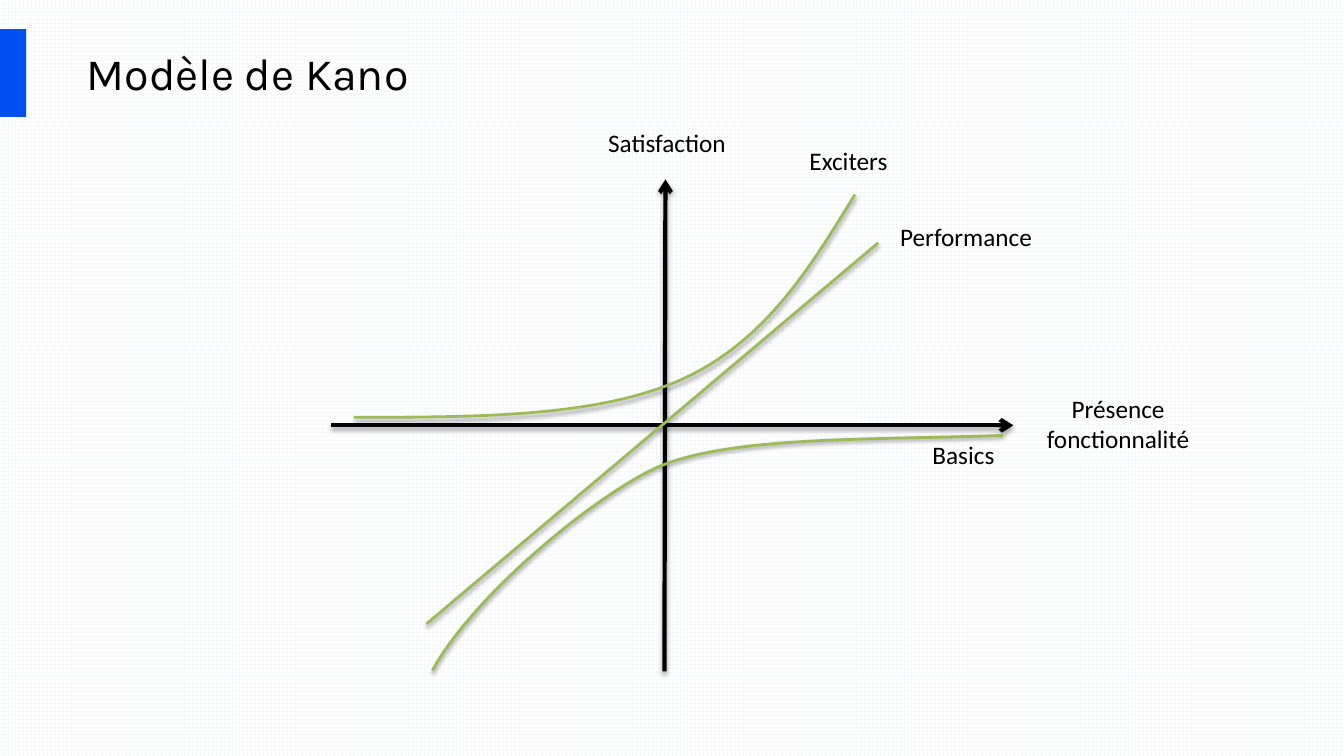
"""Build the Kano model slide: two axes, three satisfaction curves and their labels."""

from dataclasses import dataclass

import pptx
import pptx.dml.color
import pptx.enum.dml
import pptx.enum.shapes
import pptx.enum.text
import pptx.oxml
import pptx.oxml.ns
import pptx.shapes.base
import pptx.slide
import pptx.util

Inches = pptx.util.Inches
Pt = pptx.util.Pt
RGBColor = pptx.dml.color.RGBColor
PP_ALIGN = pptx.enum.text.PP_ALIGN
Point = tuple[float, float]

BLACK = RGBColor(0x00, 0x00, 0x00)
WHITE = RGBColor(0xFF, 0xFF, 0xFF)
BLUE = RGBColor(0x00, 0x50, 0xEF)
GREEN = RGBColor(0x9B, 0xBB, 0x59)
GRID = RGBColor(0xF6, 0xF8, 0xFC)
CURVE_STEPS = 24


@dataclass(frozen=True)
class Stroke:
    color: RGBColor
    width: float
    shadow_alpha: int
    shadow_distance: float
    arrow: bool = False


@dataclass(frozen=True)
class Line:
    start: Point
    end: Point
    stroke: Stroke


@dataclass(frozen=True)
class Curve:
    start: Point
    segments: tuple[tuple[Point, Point, Point], ...]


@dataclass(frozen=True)
class Label:
    text: str
    left: float
    top: float
    width: float
    height: float = 0.4
    align: PP_ALIGN = PP_ALIGN.LEFT


AXIS = Stroke(BLACK, 3, 35, 1.8, arrow=True)
TREND = Stroke(GREEN, 2, 38, 1.6)

LINES = (
    Line((6.6, 1.78), (6.59, 6.66), AXIS),
    Line((10.05, 4.22), (3.28, 4.22), AXIS),
    Line((4.23, 6.19), (8.71, 2.41), TREND),
)
CURVES = (
    Curve((3.51, 4.14), (
        ((4.72, 4.14), (5.92, 4.14), (6.75, 3.77)),
        ((7.58, 3.4), (8.03, 2.67), (8.48, 1.93)),
    )),
    Curve((4.29, 6.65), (
        ((4.66, 5.97), (5.73, 5.05), (6.41, 4.69)),
        ((7.09, 4.32), (8.53, 4.37), (9.95, 4.32)),
    )),
)
LABELS = (
    Label("Exciters", 7.93, 1.39, 1.18),
    Label("Performance", 8.83, 2.15, 1.85),
    Label("Basics", 9.15, 4.31, 1.18),
    Label("Satisfaction", 5.88, 1.21, 1.47, align=PP_ALIGN.CENTER),
    Label("Présence fonctionnalité", 10.16, 3.85, 1.86, 0.71, PP_ALIGN.CENTER),
)


def apply_stroke(sp: pptx.shapes.base.BaseShape, stroke: Stroke) -> None:
    sp.line.color.rgb = stroke.color
    sp.line.width = Pt(stroke.width)
    ns = pptx.oxml.ns.nsdecls("a")
    sp_pr = sp._element.spPr
    if stroke.arrow:
        ln = sp_pr.find(pptx.oxml.ns.qn("a:ln"))
        ln.append(pptx.oxml.parse_xml(f'<a:headEnd {ns} type="arrow"/>'))
    sp_pr.append(pptx.oxml.parse_xml(
        f'<a:effectLst {ns}><a:outerShdw blurRad="{Pt(3.1)}" '
        f'dist="{Pt(stroke.shadow_distance)}" dir="5400000" rotWithShape="0">'
        f'<a:srgbClr val="{BLACK}"><a:alpha val="{stroke.shadow_alpha * 1000}"/>'
        '</a:srgbClr></a:outerShdw></a:effectLst>'
    ))


def bezier(p0: Point, p1: Point, p2: Point, p3: Point, t: float) -> Point:
    u = 1 - t
    x, y = (
        u**3 * a + 3 * u**2 * t * b + 3 * u * t**2 * c + t**3 * d
        for a, b, c, d in zip(p0, p1, p2, p3)
    )
    return Inches(x), Inches(y)


def add_line(s: pptx.slide.Slide, line: Line) -> None:
    ends = (Inches(v) for v in (*line.start, *line.end))
    sp = s.shapes.add_connector(pptx.enum.shapes.MSO_CONNECTOR.STRAIGHT, *ends)
    apply_stroke(sp, line.stroke)


def add_curve(s: pptx.slide.Slide, curve: Curve) -> None:
    points = []
    start = curve.start
    for c1, c2, end in curve.segments:
        points += [
            bezier(start, c1, c2, end, i / CURVE_STEPS)
            for i in range(1, CURVE_STEPS + 1)
        ]
        start = end
    builder = s.shapes.build_freeform(*(Inches(v) for v in curve.start))
    builder.add_line_segments(points, close=False)
    sp = builder.convert_to_shape()
    sp.fill.background()
    apply_stroke(sp, TREND)


def add_label(s: pptx.slide.Slide, label: Label) -> None:
    box = (Inches(v) for v in (label.left, label.top, label.width, label.height))
    tf = s.shapes.add_textbox(*box).text_frame
    tf.word_wrap = True
    tf.auto_size = pptx.enum.text.MSO_AUTO_SIZE.SHAPE_TO_FIT_TEXT
    tf.text = label.text
    p = tf.paragraphs[0]
    p.alignment = label.align
    format_run(p.runs[0], "Calibri", 18)


def format_run(r: pptx.text.text._Run, font: str, size: int) -> None:
    r.font.name = font
    r.font.size = Pt(size)
    r.font.color.rgb = BLACK


def set_background(s: pptx.slide.Slide) -> None:
    fill = s.background.fill
    fill.patterned()
    fill.pattern = pptx.enum.dml.MSO_PATTERN.LARGE_GRID
    fill.fore_color.rgb = GRID
    fill.back_color.rgb = WHITE


def add_heading(s: pptx.slide.Slide) -> None:
    sp = s.shapes.add_shape(
        pptx.enum.shapes.MSO_SHAPE.RECTANGLE,
        Inches(0), Inches(0.29), Inches(0.26), Inches(0.87),
    )
    sp.fill.solid()
    sp.fill.fore_color.rgb = BLUE
    sp.line.fill.background()
    sp.shadow.inherit = False

    title = s.shapes.title
    title.left, title.top = Inches(0.76), Inches(0.29)
    title.width, title.height = Inches(11.92), Inches(0.85)
    tf = title.text_frame
    tf.text = "Modèle de Kano"
    tf.auto_size = pptx.enum.text.MSO_AUTO_SIZE.NONE
    tf.vertical_anchor = pptx.enum.text.MSO_ANCHOR.MIDDLE
    p = tf.paragraphs[0]
    p.alignment = PP_ALIGN.LEFT
    format_run(p.runs[0], "Karla", 32)


def main() -> None:
    prs = pptx.Presentation()
    prs.slide_width, prs.slide_height = Inches(13.33), Inches(7.5)
    s = prs.slides.add_slide(prs.slide_layouts[5])
    set_background(s)
    add_heading(s)
    for line in LINES:
        add_line(s, line)
    for curve in CURVES:
        add_curve(s, curve)
    for label in LABELS:
        add_label(s, label)
    prs.save("out.pptx")


if __name__ == "__main__":
    main()
